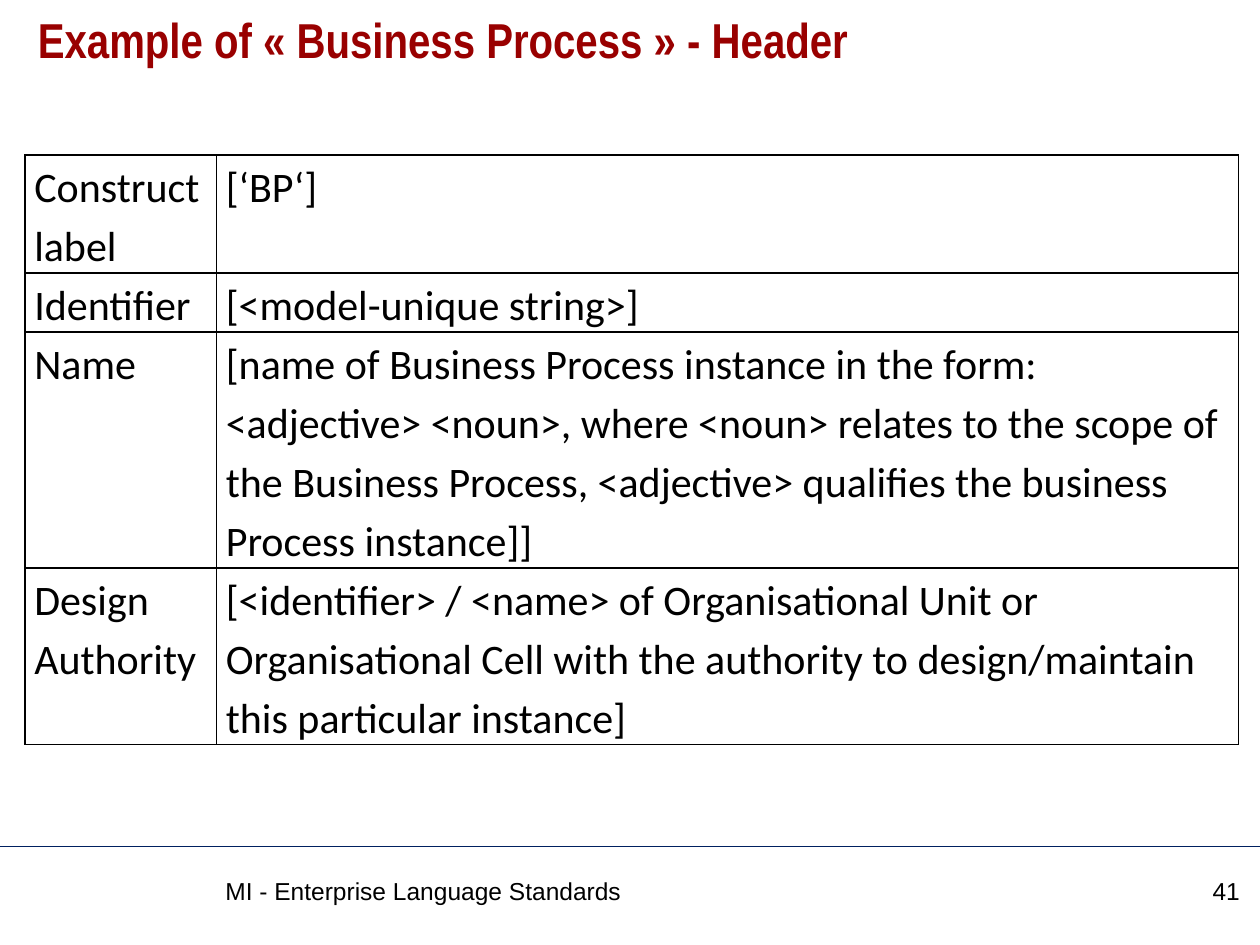
from typing import NamedTuple

from lxml.etree import SubElement
from pptx import Presentation
from pptx.dml.color import RGBColor as Rgb
from pptx.enum.shapes import MSO_CONNECTOR as Connector
from pptx.enum.text import MSO_ANCHOR as Anchor, MSO_AUTO_SIZE as AutoSize, PP_ALIGN as Align
from pptx.oxml import parse_xml
from pptx.oxml.ns import nsdecls, qn
from pptx.util import Pt

COLORS = {"heading": "990000", "ink": "000000", "rule": "002060"}
SLIDE_WIDTH, SLIDE_HEIGHT = 720, 540
LINE_HEIGHT = 33.7


class Box(NamedTuple):
    left: float
    top: float
    width: float
    height: float


class Field(NamedTuple):
    label: str
    content: str
    lines: int


class Footer(NamedTuple):
    box: Box
    wording: str
    align: Align


FIELDS = [
    Field("Construct label", "[‘BP‘]", 2),
    Field("Identifier", "[<model-unique string>]", 1),
    Field("Name", "[name of Business Process instance in the form: <adjective> <noun>, "
          "where <noun> relates to the scope of the Business Process, <adjective> "
          "qualifies the business Process instance]]", 4),
    Field("Design Authority", "[<identifier> / <name> of Organisational Unit or "
          "Organisational Cell with the authority to design/maintain this particular "
          "instance]", 3),
]
FOOTERS = [
    Footer(Box(121.7, 496.8, 519, 32.4), "MI - Enterprise Language Standards", Align.LEFT),
    Footer(Box(649.4, 496.8, 66.2, 32.4), "41", Align.RIGHT),
]


def format_runs(paragraph, font: str, size: float, color: str, bold: bool = False) -> None:
    for run in paragraph.runs:
        run.font.name = font
        run.font.size = Pt(size)
        run.font.bold = bold
        run.font.color.rgb = Rgb.from_string(COLORS[color])


def add_heading(slide, box: Box, wording: str) -> None:
    heading = slide.shapes.title
    heading.left, heading.top, heading.width, heading.height = map(Pt, box)
    frame = heading.text_frame
    frame.text = wording
    frame.word_wrap = True
    frame.auto_size = AutoSize.NONE
    frame.vertical_anchor = Anchor.TOP
    paragraph = frame.paragraphs[0]
    paragraph.alignment = Align.LEFT
    paragraph.line_spacing = 0.9
    format_runs(paragraph, "Arial Narrow", 28, "heading", True)


def add_borders(cell) -> None:
    properties = cell._tc.get_or_add_tcPr()
    for position, side in enumerate(("lnL", "lnR", "lnT", "lnB")):
        border = parse_xml(
            f'<a:{side} {nsdecls("a")} w="{Pt(1)}"><a:solidFill>'
            f'<a:srgbClr val="{COLORS["ink"]}"/></a:solidFill></a:{side}>')
        properties.insert(position, border)


def fill_cell(cell, wording: str) -> None:
    cell.text_frame.text = wording
    cell.margin_left = cell.margin_right = Pt(5.4)
    cell.margin_top = cell.margin_bottom = Pt(0)
    cell.vertical_anchor = Anchor.TOP
    cell.fill.background()
    add_borders(cell)
    paragraph = cell.text_frame.paragraphs[0]
    paragraph.line_spacing = 1.15
    format_runs(paragraph, "Calibri", 24, "ink")


def add_header_table(slide, left: float, top: float, widths: tuple[float, float]) -> None:
    height = LINE_HEIGHT * sum(field.lines for field in FIELDS)
    table = slide.shapes.add_table(
        len(FIELDS), len(widths), Pt(left), Pt(top), Pt(sum(widths)), Pt(height)).table
    table.first_row = table.horz_banding = False
    for column, width in zip(table.columns, widths):
        column.width = Pt(width)
    for index, field in enumerate(FIELDS):
        table.rows[index].height = Pt(field.lines * LINE_HEIGHT)
        fill_cell(table.cell(index, 0), field.label)
        fill_cell(table.cell(index, 1), field.content)


def add_footer_rule(slide, y: float) -> None:
    rule = slide.shapes.add_connector(
        Connector.STRAIGHT, Pt(0), Pt(y), Pt(SLIDE_WIDTH), Pt(y))
    rule.line.color.rgb = Rgb.from_string(COLORS["rule"])
    rule.line.width = Pt(0.75)
    SubElement(rule._element.spPr, qn("a:effectLst"))


def add_footer(slide, footer: Footer) -> None:
    frame = slide.shapes.add_textbox(*map(Pt, footer.box)).text_frame
    frame.word_wrap = True
    frame.text = footer.wording
    paragraph = frame.paragraphs[0]
    paragraph.alignment = footer.align
    format_runs(paragraph, "Arial", 14, "ink")


def main() -> None:
    deck = Presentation()
    deck.slide_width, deck.slide_height = Pt(SLIDE_WIDTH), Pt(SLIDE_HEIGHT)
    slide = deck.slides.add_slide(deck.slide_layouts[5])
    add_footer_rule(slide, 483.8)
    add_heading(slide, Box(14.4, 5.8, 692, 59.8), "Example of « Business Process » - Header")
    add_header_table(slide, 14.2, 88.6, (109.5, 584))
    for footer in FOOTERS:
        add_footer(slide, footer)
    deck.save("out.pptx")


if __name__ == "__main__":
    main()
